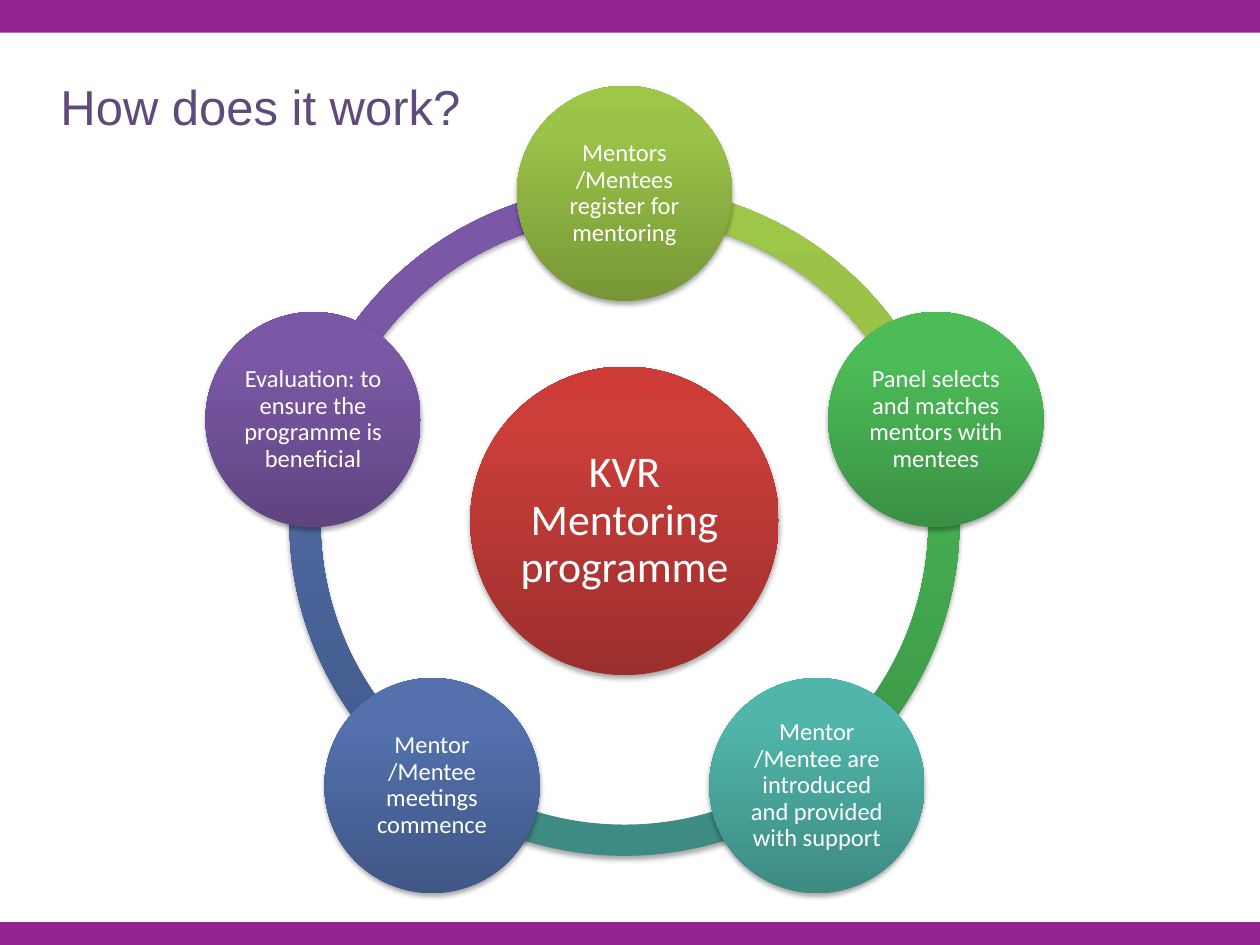
from math import cos, radians, sin

from lxml.etree import SubElement
from pptx import Presentation
from pptx.dml.color import RGBColor
from pptx.enum.shapes import MSO_SHAPE
from pptx.enum.text import MSO_ANCHOR, PP_ALIGN
from pptx.oxml.ns import qn
from pptx.util import Cm, Pt

# Content: steps clockwise from the top, each with its colour name
TITLE = "How does it work?"
HUB = ("KVR Mentoring programme", "red")
STEPS = [
    ("Mentors /Mentees register for mentoring", "lime"),
    ("Panel selects and matches mentors with mentees", "green"),
    ("Mentor /Mentee are introduced and provided with support", "teal"),
    ("Mentor /Mentee meetings commence", "blue"),
    ("Evaluation: to ensure the programme is beneficial", "purple"),
]

THEME = {
    "bar": "94238F",
    "title": ("Arial", 28, "604A7B"),
    "hub": ("Calibri", 25, "FFFFFF"),
    "step": ("Calibri", 14, "FFFFFF"),
    # gradient colours from bottom to top
    "gradients": {
        "red": ("9C2F2D", "CB3E3A", "CE3B37"),
        "lime": ("779737", "9BC348", "9DC746"),
        "green": ("3A9144", "4CBC58", "4ABF57"),
        "teal": ("3D8B83", "50B5AA", "4EB8AC"),
        "blue": ("405786", "5471AE", "5271B0"),
        "purple": ("5F4480", "7B58A6", "7C57A8"),
    },
}
GRADIENT_STOPS = (0, 80, 100)

# Geometry in centimetres
PAGE_WIDTH, PAGE_HEIGHT = 25.4, 19.05
BAR_HEIGHT = 0.46
BAR_TOPS = (-0.13, 0.2, PAGE_HEIGHT - BAR_HEIGHT)
CENTRE_X, CENTRE_Y = 12.59, 10.5
ORBIT = 6.6
RING_SIZE, HUB_SIZE, STEP_SIZE = 13.51, 6.22, 4.34
RING_THICKNESS = 0.0464
STEP_ANGLE = 360 / len(STEPS)


def add_text(paragraph, text, style):
    name, size, colour = style
    span = paragraph.add_run()
    span.text = text
    span.font.name = name
    span.font.size = Pt(size)
    span.font.color.rgb = RGBColor.from_string(colour)


def add_round(page, kind, x, y, size, colour):
    """Add a shaded, shadowed shape centred on x, y."""
    shape = page.shapes.add_shape(
        kind, Cm(x - size / 2), Cm(y - size / 2), Cm(size), Cm(size))
    shape.line.fill.background()
    shape.fill.gradient()
    properties = shape.fill._xPr
    gradient = properties.find(qn("a:gradFill"))
    for child in list(gradient):
        gradient.remove(child)
    stops = SubElement(gradient, qn("a:gsLst"))
    for position, value in zip(GRADIENT_STOPS, THEME["gradients"][colour]):
        stop = SubElement(stops, qn("a:gs"), pos=str(position * 1000))
        SubElement(stop, qn("a:srgbClr"), val=value)
    SubElement(gradient, qn("a:lin"), ang=str(270 * 60000), scaled="0")

    shape.shadow.inherit = False
    shadow = SubElement(
        properties.find(qn("a:effectLst")), qn("a:outerShdw"),
        blurRad=str(Pt(3.1)), dist=str(Pt(1.8)), dir=str(90 * 60000),
        rotWithShape="0")
    shadow_colour = SubElement(shadow, qn("a:srgbClr"), val="000000")
    SubElement(shadow_colour, qn("a:alpha"), val="35000")
    return shape


def add_circle(page, x, y, size, content, style, inset):
    text, colour = content
    circle = add_round(page, MSO_SHAPE.OVAL, x, y, size, colour)
    frame = circle.text_frame
    frame.word_wrap = True
    frame.vertical_anchor = MSO_ANCHOR.MIDDLE
    frame.margin_left = frame.margin_right = Cm(inset)
    frame.margin_top = frame.margin_bottom = Cm(inset)
    paragraph = frame.paragraphs[0]
    paragraph.alignment = PP_ALIGN.CENTER
    paragraph.line_spacing = 0.9
    add_text(paragraph, text, style)


deck = Presentation()
deck.slide_width, deck.slide_height = Cm(PAGE_WIDTH), Cm(PAGE_HEIGHT)
page = deck.slides.add_slide(deck.slide_layouts[6])

# Bars at the top and bottom edges
for top in BAR_TOPS:
    bar = page.shapes.add_shape(
        MSO_SHAPE.RECTANGLE, 0, Cm(top), Cm(PAGE_WIDTH), Cm(BAR_HEIGHT))
    bar.shadow.inherit = False
    bar.fill.solid()
    bar.fill.fore_color.rgb = RGBColor.from_string(THEME["bar"])
    bar.line.fill.background()

# Ring: one arc from each step to the next
angles = [(270 + index * STEP_ANGLE) % 360 for index in range(len(STEPS))]
for (text, colour), angle in reversed(list(zip(STEPS, angles))):
    arc = add_round(
        page, MSO_SHAPE.BLOCK_ARC, CENTRE_X, CENTRE_Y, RING_SIZE, colour)
    # adjustments count 60000ths of a degree in units of 100000
    arc.adjustments[0] = angle * 0.6
    arc.adjustments[1] = (angle + STEP_ANGLE) % 360 * 0.6
    arc.adjustments[2] = RING_THICKNESS

# Hub and steps
add_circle(page, CENTRE_X, CENTRE_Y, HUB_SIZE, HUB, THEME["hub"], 0.08)
for step, angle in zip(STEPS, angles):
    x = CENTRE_X + ORBIT * cos(radians(angle))
    y = CENTRE_Y + ORBIT * sin(radians(angle))
    add_circle(page, x, y, STEP_SIZE, step, THEME["step"], 0.05)

# Title
box = page.shapes.add_textbox(Cm(1.22), Cm(1.8), Cm(23.67), Cm(1.47))
frame = box.text_frame
frame.word_wrap = True
frame.margin_left = frame.margin_right = 0
frame.margin_top = frame.margin_bottom = 0
heading = frame.paragraphs[0]
heading.line_spacing = 0.78
add_text(heading, TITLE, THEME["title"])

deck.save("out.pptx")
